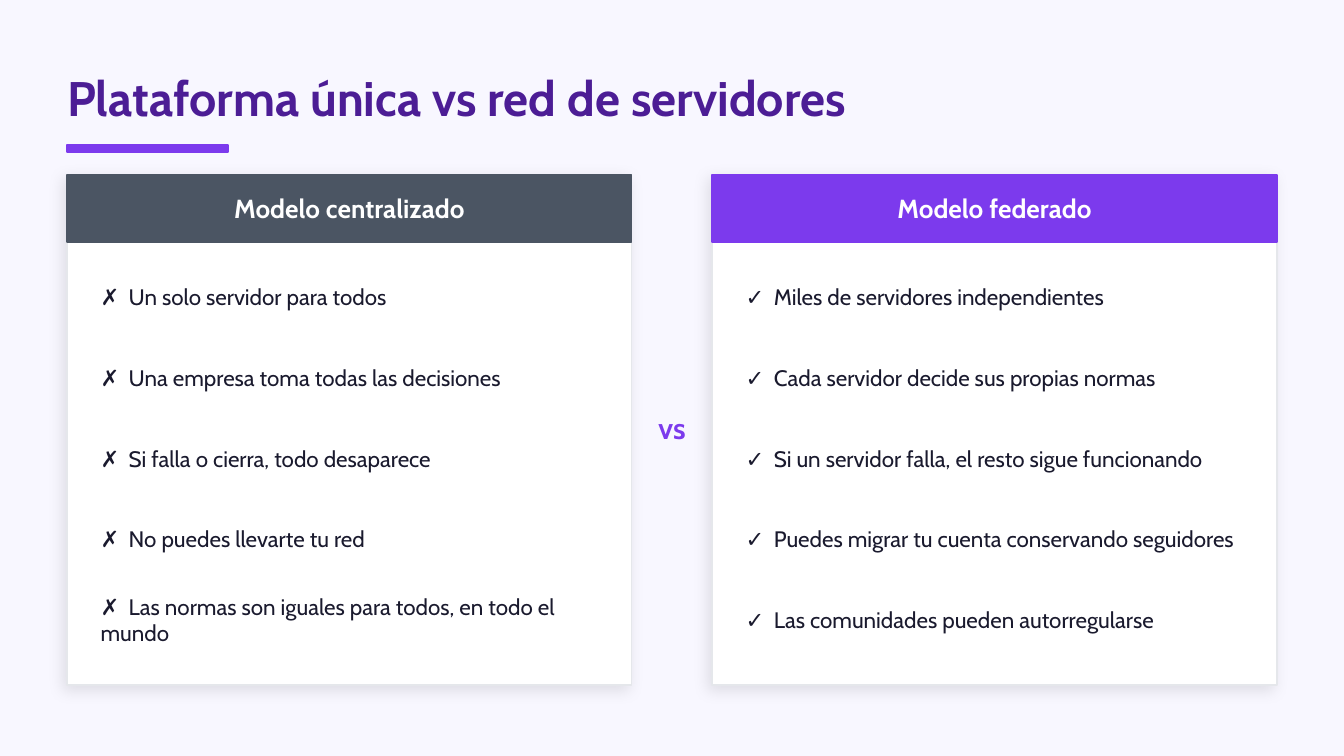
from dataclasses import dataclass

from lxml import etree
from pptx import Presentation
from pptx.dml.color import RGBColor
from pptx.enum.shapes import MSO_SHAPE
from pptx.enum.text import MSO_ANCHOR, MSO_AUTO_SIZE, PP_ALIGN
from pptx.oxml.ns import qn
from pptx.util import Pt

RECTANGLE = MSO_SHAPE.RECTANGLE
MIDDLE = MSO_ANCHOR.MIDDLE
NO_AUTOFIT = MSO_AUTO_SIZE.NONE
LEFT, CENTER = PP_ALIGN.LEFT, PP_ALIGN.CENTER

EMU_PER_PX = 4572  # 200 px to the inch
TITLE_ONLY = 5


@dataclass(frozen=True)
class Theme:
    font: str = "Cabin"
    background: str = "F8F7FF"
    title: str = "4C1D95"
    accent: str = "7C3AED"
    neutral: str = "4B5563"
    card: str = "FFFFFF"
    card_line: str = "E5E7EB"
    on_color: str = "FFFFFF"
    body: str = "1A1A2E"
    shadow: str = "000000"
    title_size: int = 26
    versus_size: int = 16
    header_size: int = 14
    body_size: int = 12


THEME = Theme()

CENTRALIZED = [
    "Un solo servidor para todos",
    "Una empresa toma todas las decisiones",
    "Si falla o cierra, todo desaparece",
    "No puedes llevarte tu red",
    "Las normas son iguales para todos, en todo el mundo",
]
FEDERATED = [
    "Miles de servidores independientes",
    "Cada servidor decide sus propias normas",
    "Si un servidor falla, el resto sigue funcionando",
    "Puedes migrar tu cuenta conservando seguidores",
    "Las comunidades pueden autorregularse",
]


def px(length):
    return length * EMU_PER_PX


def emu_box(box):
    return [px(length) for length in box]


def write_text(frame, text, size, color, bold=False, align=LEFT, tab=None):
    """Fill a frame with one vertically centred paragraph, with a tab stop if given."""
    frame.word_wrap = True
    frame.auto_size = NO_AUTOFIT
    frame.vertical_anchor = MIDDLE
    para = frame.paragraphs[0]
    para.text = text
    para.alignment = align
    if tab is not None:
        tabs = etree.SubElement(para._p.get_or_add_pPr(), qn("a:tabLst"))
        etree.SubElement(tabs, qn("a:tab"), pos=str(px(tab)), algn="l")
    para.font.name = THEME.font
    para.font.size = Pt(size)
    para.font.bold = bold
    para.font.color.rgb = RGBColor.from_string(color)


def add_text(page, box, text, size, color, **style):
    label = page.shapes.add_textbox(*emu_box(box))
    write_text(label.text_frame, text, size, color, **style)


def add_rectangle(page, box, fill, line):
    rectangle = page.shapes.add_shape(RECTANGLE, *emu_box(box))
    rectangle.fill.solid()
    rectangle.fill.fore_color.rgb = RGBColor.from_string(fill)
    rectangle.line.color.rgb = RGBColor.from_string(line)
    rectangle.line.width = Pt(1)
    rectangle.shadow.inherit = False
    return rectangle


def add_soft_shadow(shape):
    effects = shape.element.spPr.find(qn("a:effectLst"))
    outer = etree.SubElement(
        effects, qn("a:outerShdw"), blurRad=str(Pt(8)), dist=str(Pt(3)),
        dir=str(135 * 60000), algn="bl", rotWithShape="0")
    color = etree.SubElement(outer, qn("a:srgbClr"), val=THEME.shadow)
    etree.SubElement(color, qn("a:alpha"), val="10000")


def add_heading(page, box, text):
    """Place the title and the accent rule beneath it."""
    left, top, width, height = box
    title = page.shapes.title
    title.left, title.top, title.width, title.height = emu_box(box)
    frame = title.text_frame
    frame.margin_left = frame.margin_right = 0
    frame.margin_top = frame.margin_bottom = 0
    write_text(frame, text, THEME.title_size, THEME.title, bold=True)
    add_rectangle(page, (left, top + height + 6, 240, 10), THEME.accent, THEME.accent)


def add_model_card(page, box, heading, color, mark, points):
    left, top, width, height = box
    header_height = 100
    inset, first_row, row_height, row_pitch = 30, 130, 104, 120

    card = add_rectangle(page, box, THEME.card, THEME.card_line)
    add_soft_shadow(card)
    header = add_rectangle(page, (left, top, width, header_height), color, color)
    write_text(header.text_frame, heading, THEME.header_size, THEME.on_color,
               bold=True, align=CENTER)
    for row, point in enumerate(points):
        row_box = (left + inset, top + first_row + row * row_pitch,
                   width - 2 * inset, row_height)
        add_text(page, row_box, f"{mark}\t{point}", THEME.body_size, THEME.body, tab=42)


def main():
    deck = Presentation()
    deck.slide_width, deck.slide_height = px(2000), px(1125)
    page = deck.slides.add_slide(deck.slide_layouts[TITLE_ONLY])
    page.background.fill.solid()
    page.background.fill.fore_color.rgb = RGBColor.from_string(THEME.background)

    margin, card_width = 100, 840
    right_card = 2000 - margin - card_width
    add_heading(page, (margin, 80, 1800, 130), "Plataforma única vs red de servidores")
    add_model_card(page, (margin, 260, card_width, 760), "Modelo centralizado",
                   THEME.neutral, "✗", CENTRALIZED)
    add_model_card(page, (right_card, 260, card_width, 760), "Modelo federado",
                   THEME.accent, "✓", FEDERATED)
    add_text(page, (944, 580, 112, 112), "vs", THEME.versus_size, THEME.accent,
             bold=True, align=CENTER)
    deck.save("out.pptx")


if __name__ == "__main__":
    main()
